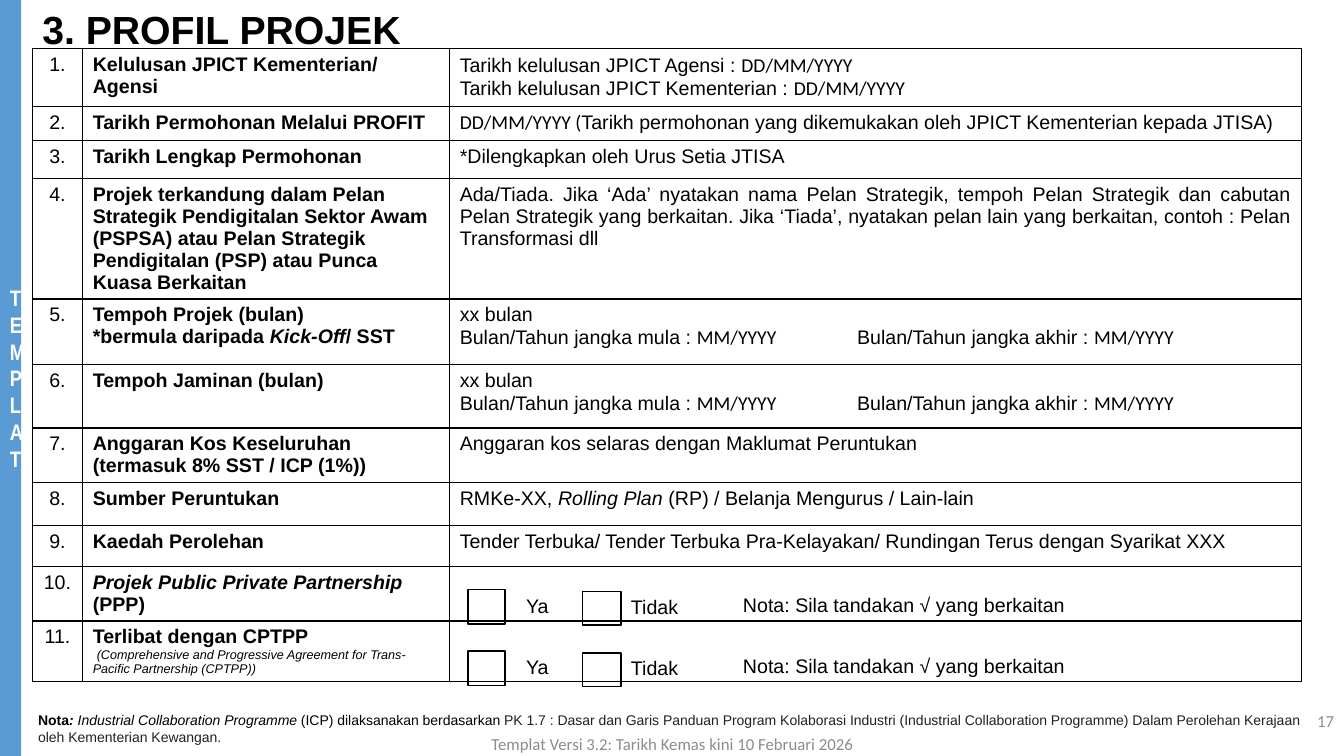
from lxml.etree import SubElement
from pptx import Presentation
from pptx.dml.color import RGBColor
from pptx.enum.shapes import MSO_SHAPE
from pptx.enum.text import MSO_ANCHOR as ANCHOR, MSO_AUTO_SIZE as AUTO_SIZE, PP_ALIGN as ALIGN
from pptx.oxml.ns import qn
from pptx.util import Pt

PX = 9144  # 100 px to the inch
BLACK = RGBColor(0x00, 0x00, 0x00)
WHITE = RGBColor(0xFF, 0xFF, 0xFF)
BLUE = RGBColor(0x5B, 0x9B, 0xD5)
GREY = RGBColor(0x8C, 0x8C, 0x8C)
CHARCOAL = RGBColor(0x20, 0x21, 0x24)
DATE = {"font": "Calibri"}
BOLD = {"bold": True}
ITALIC = {"italic": True}
BOLD_ITALIC = {"bold": True, "italic": True}


def write(paragraph, text, size=14, font="Arial", color=BLACK, bold=False, italic=False):
    run = paragraph.add_run()
    run.text = text
    run.font.size = Pt(size)
    run.font.name = font
    run.font.color.rgb = color
    run.font.bold = bold
    run.font.italic = italic


def add_textbox(shapes, left, top, width, height, wrap=True):
    frame = shapes.add_textbox(left * PX, top * PX, width * PX, height * PX).text_frame
    frame.word_wrap = wrap
    return frame


deck = Presentation()
deck.slide_width, deck.slide_height = 1333 * PX, 750 * PX
slide = deck.slides.add_slide(deck.slide_layouts[5])

# Side bar: too narrow for more than one letter a line
bar = slide.shapes.add_shape(MSO_SHAPE.RECTANGLE, 0, 0, 21 * PX, 750 * PX)
bar.shadow.inherit = False
bar.fill.solid()
bar.fill.fore_color.rgb = BLUE
bar.line.fill.background()
bar.text_frame.word_wrap = True
bar.text_frame.vertical_anchor = ANCHOR.MIDDLE
bar_text = bar.text_frame.paragraphs[0]
bar_text.alignment = ALIGN.CENTER
write(bar_text, "TEMPLAT", size=16, font="Arial Narrow", color=WHITE, bold=True)

# Project profile: row height, label paragraphs, detail paragraphs
period = [
    [("xx bulan", {})],
    [("Bulan/Tahun jangka mula : ", {}), ("MM/YYYY", DATE),
     ("\tBulan/Tahun jangka akhir : ", {}), ("MM/YYYY", DATE)],
]
profile = [
    (46, [[("Kelulusan JPICT Kementerian/ Agensi", BOLD)]],
     [[("Tarikh kelulusan JPICT Agensi : ", {}), ("DD/MM/YYYY", DATE)],
      [("Tarikh kelulusan JPICT Kementerian : ", {}), ("DD/MM/YYYY", DATE)]]),
    (34, [[("Tarikh Permohonan Melalui PROFIT", BOLD)]],
     [[("DD/MM/YYYY (", DATE),
       ("Tarikh permohonan yang dikemukakan oleh JPICT Kementerian kepada JTISA)", {})]]),
    (38, [[("Tarikh Lengkap Permohonan", BOLD)]],
     [[("*Dilengkapkan oleh Urus Setia JTISA", {})]]),
    (108, [[("Projek terkandung dalam Pelan Strategik Pendigitalan Sektor Awam (PSPSA) atau "
             "Pelan Strategik Pendigitalan (PSP) atau Punca Kuasa Berkaitan", BOLD)]],
     [[("Ada/Tiada. Jika ‘Ada’ nyatakan nama Pelan Strategik, tempoh Pelan Strategik dan "
        "cabutan Pelan Strategik yang berkaitan. Jika ‘Tiada’, nyatakan pelan lain yang "
        "berkaitan, contoh : Pelan Transformasi dll", {})]]),
    (65, [[("Tempoh Projek (bulan)", BOLD)],
          [("*bermula daripada ", BOLD), ("Kick-Off", BOLD_ITALIC), ("/ SST", BOLD)]], period),
    (63, [[("Tempoh Jaminan (bulan)", BOLD)]], period),
    (37, [[("Anggaran Kos Keseluruhan", BOLD)], [("(termasuk 8% SST / ICP (1%))", BOLD)]],
     [[("Anggaran kos selaras dengan Maklumat Peruntukan", {})]]),
    (43, [[("Sumber Peruntukan", BOLD)]],
     [[("RMKe-XX, ", {}), ("Rolling Plan ", ITALIC),
       ("(RP) / Belanja Mengurus / Lain-lain", {})]]),
    (41, [[("Kaedah Perolehan", BOLD)]],
     [[("Tender Terbuka/ Tender Terbuka Pra-Kelayakan/ Rundingan Terus dengan Syarikat XXX",
        {})]]),
    (41, [[("Projek Public Private Partnership ", BOLD_ITALIC), ("(PPP)", BOLD)]], []),
    (41, [[("Terlibat dengan CPTPP", BOLD)],
          [("(Comprehensive and Progressive Agreement for Trans-Pacific Partnership (CPTPP))",
            {"size": 9, "italic": True})]], []),
]
JUSTIFIED_ROWS = (4, 8, 9)
AKHIR_TAB = 394
CPTPP_INDENT = 4

table = slide.shapes.add_table(len(profile), 3, 32 * PX, 48 * PX, 1259 * PX,
                               sum(row[0] for row in profile) * PX).table
table.first_row = table.horz_banding = False
for column, width in zip(table.columns, (50, 364, 845)):
    column.width = width * PX

for number, (height, label, detail) in enumerate(profile, 1):
    table.rows[number - 1].height = height * PX
    for column, content in enumerate(([[(f"{number}.", {})]], label, detail)):
        cell = table.cell(number - 1, column)
        for side in ("a:lnL", "a:lnR", "a:lnT", "a:lnB"):
            border = SubElement(cell._tc.get_or_add_tcPr(), qn(side), w=str(Pt(1)))
            border_fill = SubElement(border, qn("a:solidFill"))
            SubElement(border_fill, qn("a:srgbClr"), val=str(BLACK))
        cell.fill.background()
        for index, runs in enumerate(content):
            frame = cell.text_frame
            paragraph = frame.add_paragraph() if index else frame.paragraphs[0]
            if column == 0:
                paragraph.alignment = ALIGN.CENTER
            elif column == 2 and number in JUSTIFIED_ROWS:
                paragraph.alignment = ALIGN.JUSTIFY
            if any("\t" in text for text, _ in runs):
                tabs = SubElement(paragraph._p.get_or_add_pPr(), qn("a:tabLst"))
                SubElement(tabs, qn("a:tab"), pos=str(AKHIR_TAB * PX), algn="l")
            if number == len(profile) and column == 1 and index:
                paragraph._p.get_or_add_pPr().set("indent", str(CPTPP_INDENT * PX))
            for text, style in runs:
                write(paragraph, text, **style)

# Title: its baseline stays just above the table
title = slide.shapes.title
title.left, title.top, title.width, title.height = 32 * PX, 0, 989 * PX, 55 * PX
title.text_frame.vertical_anchor = ANCHOR.TOP
title.text_frame.auto_size = AUTO_SIZE.NONE
title.text_frame.margin_top = 5 * PX
heading = title.text_frame.paragraphs[0]
heading.alignment = ALIGN.LEFT
write(heading, "3. PROFIL PROJEK", size=28, bold=True)

# Footnote
footnote = add_textbox(slide.shapes, 28, 701, 1278, 44).paragraphs[0]
for text, style in (
    ("Nota", BOLD),
    (": ", BOLD_ITALIC),
    ("Industrial Collaboration Programme ", ITALIC),
    ("(ICP) dilaksanakan berdasarkan ", {}),
    ("PK 1.7 : Dasar dan Garis Panduan Program Kolaborasi Industri (Industrial Collaboration "
     "Programme) Dalam Perolehan Kerajaan oleh Kementerian Kewangan.", {"color": CHARCOAL}),
):
    write(footnote, text, size=10, **style)

# Yes/no choices in the last two rows
for top in (583, 644):
    choice = slide.shapes.add_group_shape().shapes
    for left, drop, width, height in ((464, 2, 37, 34), (578, 4, 38, 33)):
        checkbox = choice.add_shape(MSO_SHAPE.RECTANGLE, left * PX, (top + drop) * PX,
                                    width * PX, height * PX)
        checkbox.shadow.inherit = False
        checkbox.fill.background()
        checkbox.line.color.rgb = BLACK
        checkbox.line.width = Pt(1)
    for text, left, drop, width in (
        ("Ya", 512, 1, 43),
        ("Tidak", 616, 2, 67),
        ("Nota: Sila tandakan √ yang berkaitan", 727, 0, 341),
    ):
        frame = add_textbox(choice, left, top + drop, width, 34, wrap=False)
        frame.auto_size = AUTO_SIZE.SHAPE_TO_FIT_TEXT
        write(frame.paragraphs[0], text)

# Slide number and version
for text, left, top, width, align in (
    ("17", 1033, 695, 300, ALIGN.RIGHT),
    ("Templat Versi 3.2: Tarikh Kemas kini 10 Februari 2026", 442, 718, 450, ALIGN.CENTER),
):
    frame = add_textbox(slide.shapes, left, top, width, 40)
    frame.vertical_anchor = ANCHOR.MIDDLE
    frame.paragraphs[0].alignment = align
    write(frame.paragraphs[0], text, size=12, font="Calibri", color=GREY)

deck.save("out.pptx")
